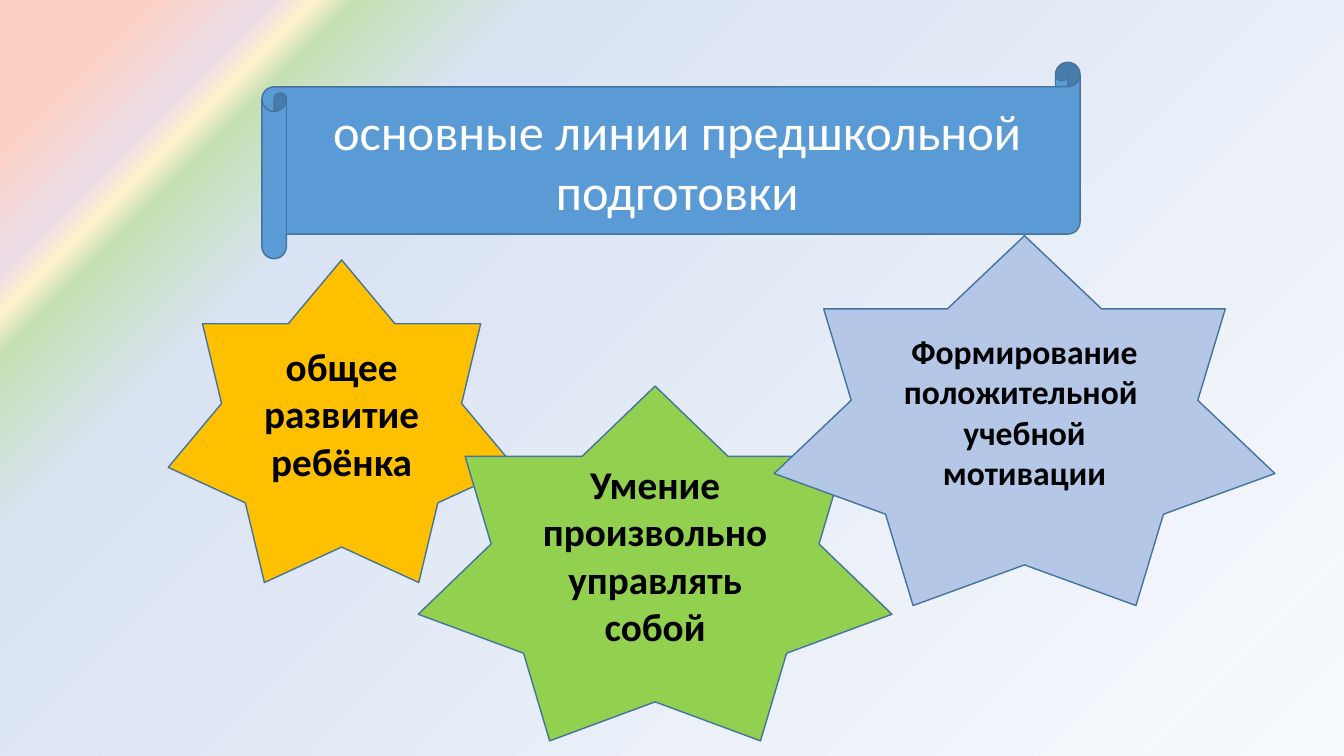
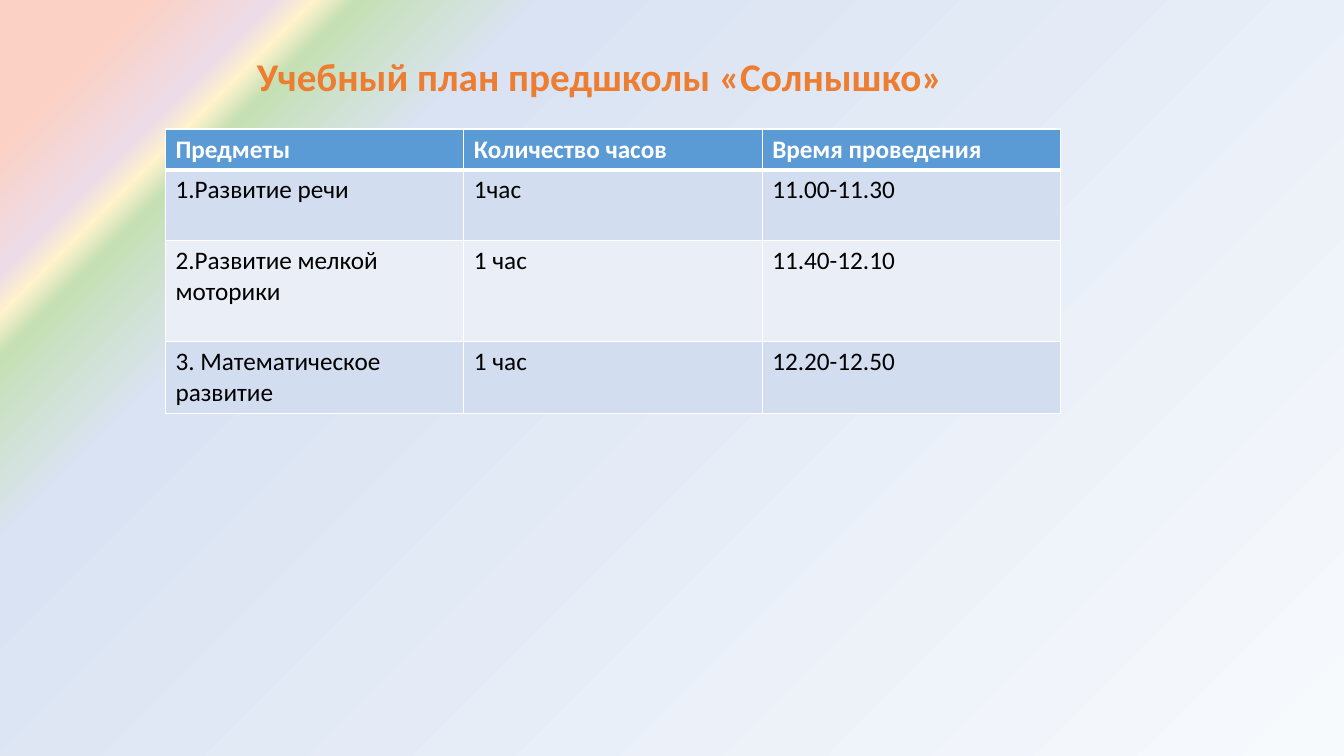
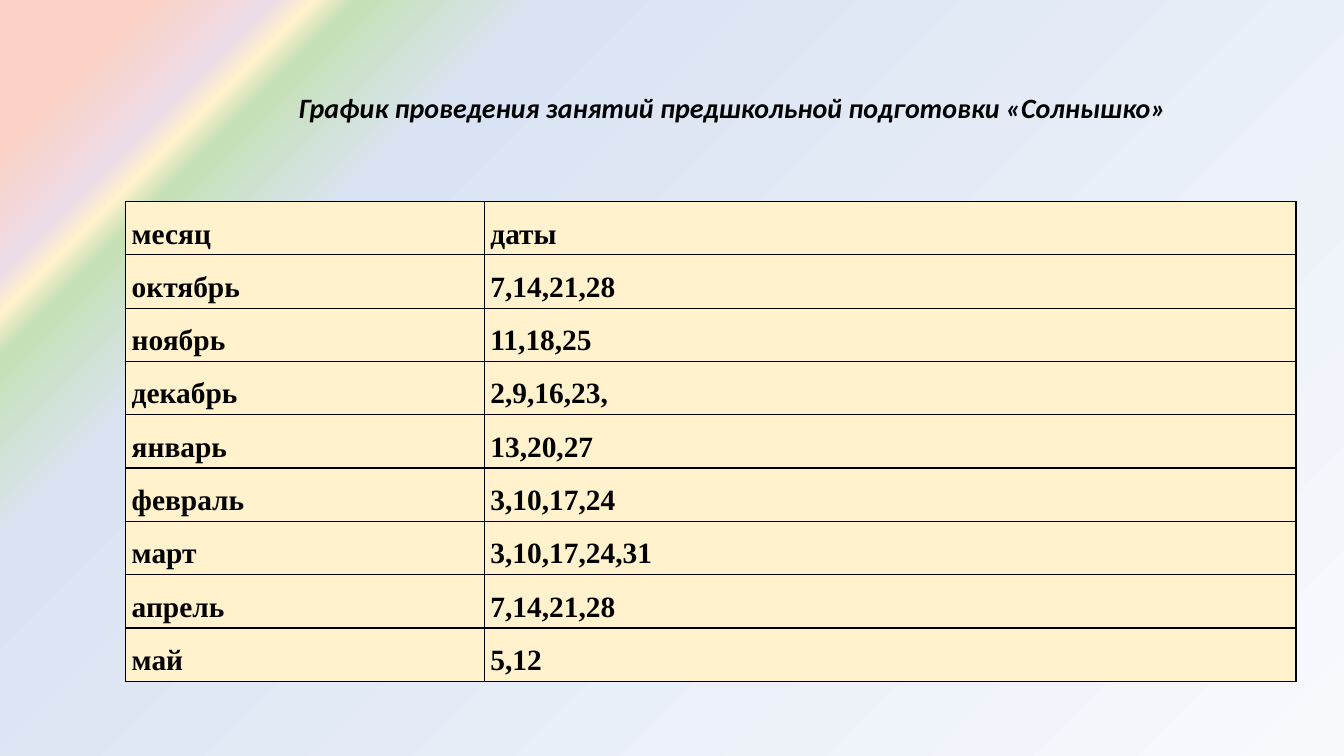
from lxml import etree
from pptx import Presentation
from pptx.dml.color import RGBColor
from pptx.enum.shapes import MSO_SHAPE
from pptx.enum.text import MSO_ANCHOR, MSO_AUTO_SIZE, PP_ALIGN
from pptx.oxml import parse_xml
from pptx.util import Cm, Pt

SCROLL, STAR = MSO_SHAPE.HORIZONTAL_SCROLL, MSO_SHAPE.STAR_7_POINT
TOP, MIDDLE = MSO_ANCHOR.TOP, MSO_ANCHOR.MIDDLE
LEFT, CENTER = PP_ALIGN.LEFT, PP_ALIGN.CENTER
NO_FIT = MSO_AUTO_SIZE.NONE

NS = "http://schemas.openxmlformats.org/drawingml/2006/main"
BLUE, OUTLINE, ORANGE = "5B9BD5", "43739E", "ED7D31"
BLACK, WHITE, CREAM = "000000", "FFFFFF", "FFF2CC"
STOPS = [(0, "F7FAFD"), (74, "DAE3F3"), (83, "C5E0B4"),
         (85, CREAM), (87, "ECDCE8"), (93, "FBD1C5")]
rgb = RGBColor.from_string


def add_run(p, text, size, color, bold=True, italic=False, font="Calibri"):
    r = p.add_run()
    r.text = text
    r.font.name = font
    r.font.size = Pt(size)
    r.font.bold = bold
    r.font.italic = italic
    r.font.color.rgb = rgb(color)


def style_cell(cell, fill, line, top=1, bottom=1):
    cell.fill.solid()
    cell.fill.fore_color.rgb = rgb(fill)
    tcPr = cell._tc.get_or_add_tcPr()
    sides = [("lnL", 1), ("lnR", 1), ("lnT", top), ("lnB", bottom)]
    for i, (side, width) in enumerate(sides):
        ln = etree.Element(f"{{{NS}}}{side}", w=str(Pt(width)))
        solid = etree.SubElement(ln, f"{{{NS}}}solidFill")
        etree.SubElement(solid, f"{{{NS}}}srgbClr", val=line)
        tcPr.insert(i, ln)


prs = Presentation()
prs.slide_width, prs.slide_height = Cm(33.87), Cm(19.05)

fill = prs.slide_master.background.fill
fill.solid()
stops = "".join(f'<a:gs pos="{pos * 1000}"><a:srgbClr val="{color}"/></a:gs>'
                for pos, color in STOPS)
gradient = parse_xml(
    f'<a:gradFill xmlns:a="{NS}" rotWithShape="1"><a:gsLst>{stops}</a:gsLst>'
    '<a:path path="circle"><a:fillToRect l="100000" t="100000"/></a:path>'
    '<a:tileRect r="-100000" b="-100000"/></a:gradFill>')
bgPr = prs.slide_master.element.cSld.bg.bgPr
bgPr.replace(bgPr[0], gradient)

titles = [
    ("основные линии предшкольной подготовки", (7.22, 2.18, 19.7, 3.73),
     36, WHITE, False, False, CENTER, MIDDLE, True),
    ("Учебный план предшколы «Солнышко»", (6.22, 1.19, 18.06, 1.45),
     28, ORANGE, True, False, LEFT, MIDDLE, True),
    ("График проведения занятий предшкольной подготовки «Солнышко»",
     (7.21, 2.16, 22.5, 1.12), 20, BLACK, True, True, CENTER, TOP, False),
]
stars = [
    ((4.24, 6.55, 8.74, 8.13), "FFC000", 28, ["общее развитие ребёнка"]),
    ((10.54, 9.73, 11.94, 8.94), "92D050", 28,
     ["Умение", "произвольно управлять собой"]),
    ((19.51, 5.94, 12.62, 9.32), "B4C7E7", 24,
     ["Формирование положительной ", "учебной мотивации"]),
]
shapes = [((6.6, 1.57, 20.62, 4.95), BLUE, 36, [])] + stars

slides = []
for text, box, size, color, bold, italic, align, anchor, wrap in titles:
    s = prs.slides.add_slide(prs.slide_layouts[5])
    slides.append(s)
    sp = s.shapes.title
    sp.left, sp.top, sp.width, sp.height = [Cm(v) for v in box]
    tf = sp.text_frame
    tf.auto_size = NO_FIT
    tf.word_wrap = wrap
    tf.vertical_anchor = anchor
    p = tf.paragraphs[0]
    p.alignment = align
    add_run(p, text, size, color, bold, italic)

s = slides[0]
for box, color, size, lines in shapes:
    sp = s.shapes.add_shape(STAR if lines else SCROLL, *[Cm(v) for v in box])
    sp.shadow.inherit = False
    sp.fill.solid()
    sp.fill.fore_color.rgb = rgb(color)
    sp.line.color.rgb = rgb(OUTLINE)
    sp.line.width = Pt(1)
    tf = sp.text_frame
    tf.word_wrap = True
    tf.vertical_anchor = MIDDLE
    for i, line in enumerate(lines):
        p = tf.add_paragraph() if i else tf.paragraphs[0]
        p.alignment = CENTER
        add_run(p, line, size, BLACK)
    if not lines:
        sp.element.addnext(s.shapes.title.element)

plan = [
    ("Предметы", "Количество часов", "Время проведения"),
    ("1.Развитие речи", "1час", "11.00-11.30"),
    ("2.Развитие мелкой моторики", "1 час", "11.40-12.10"),
    ("3. Математическое развитие", "1 час", "12.20-12.50"),
]
plan_heights = [1.03, 1.78, 2.55, 1.78]
schedule = [
    ("месяц", "даты"),
    ("октябрь", "7,14,21,28"),
    ("ноябрь", "11,18,25"),
    ("декабрь", "2,9,16,23,"),
    ("январь", "13,20,27"),
    ("февраль", "3,10,17,24"),
    ("март", "3,10,17,24,31"),
    ("апрель", "7,14,21,28"),
    ("май", "5,12"),
]
schedule_heights = [12.09 / len(schedule)] * len(schedule)
tables = [
    (slides[1], plan, 4.17, 3.25, [7.52] * 3, plan_heights),
    (slides[2], schedule, 3.17, 5.08, [9.04, 20.45], schedule_heights),
]
for s, rows, left, top, widths, heights in tables:
    table = s.shapes.add_table(len(rows), len(widths), Cm(left), Cm(top),
                               Cm(sum(widths)), Cm(sum(heights))).table
    table.first_row = table.horz_banding = False
    for column, width in zip(table.columns, widths):
        column.width = Cm(width)
    for i, (row, height) in enumerate(zip(rows, heights)):
        table.rows[i].height = Cm(height)
        for j, text in enumerate(row):
            cell = table.cell(i, j)
            p = cell.text_frame.paragraphs[0]
            if rows is plan:
                band = BLUE if i == 0 else ("EAEFF7", "D2DEEF")[i % 2]
                style_cell(cell, band, WHITE, 3 if i == 1 else 1,
                           3 if i == 0 else 1)
                add_run(p, text, 18, BLACK if i else WHITE, i == 0)
            else:
                style_cell(cell, CREAM, BLACK)
                cell.margin_left = cell.margin_right = Cm(0.15)
                cell.margin_top = cell.margin_bottom = Cm(0)
                p.line_spacing = 1.5
                add_run(p, text, 21, BLACK, font="Times New Roman")

prs.save("out.pptx")
